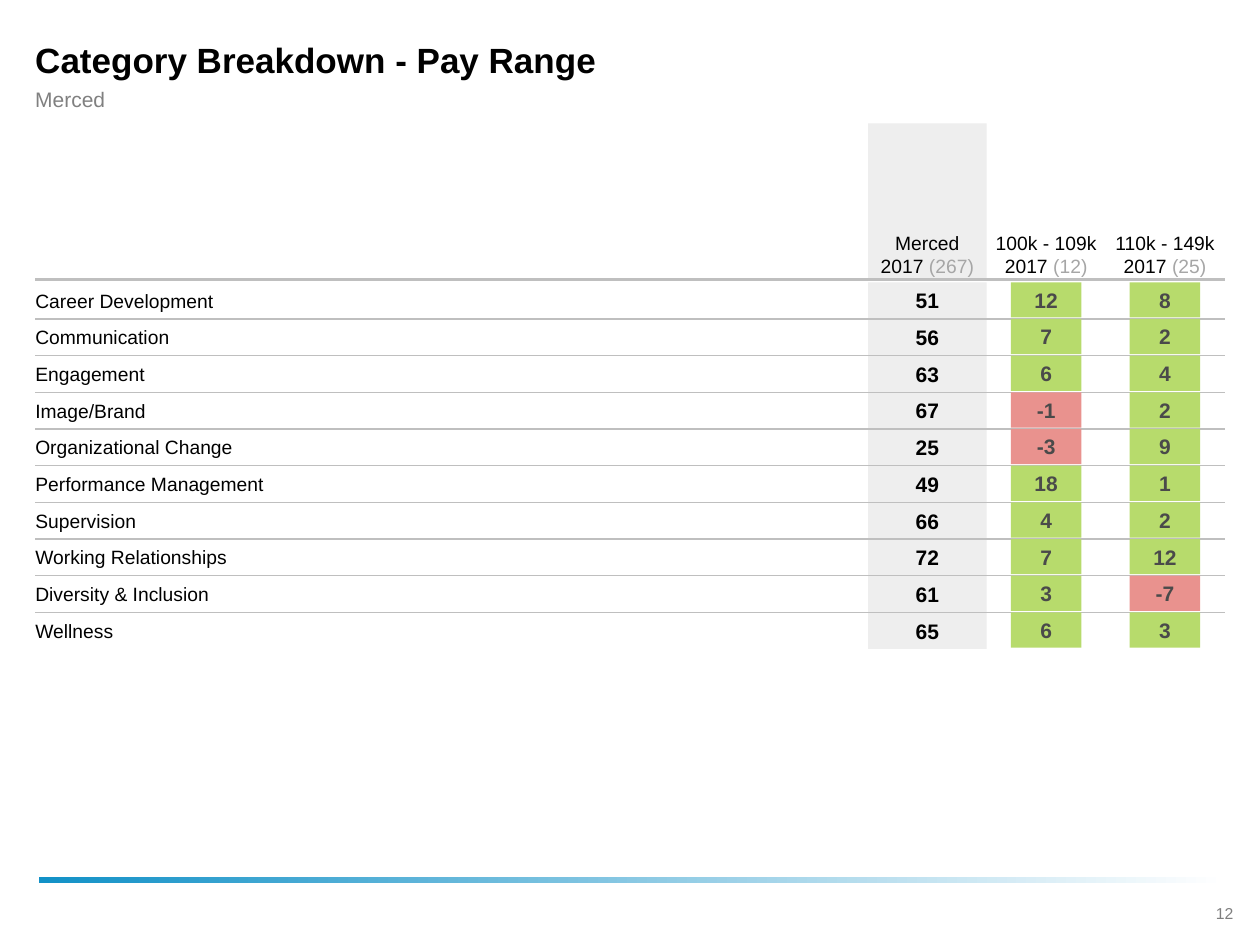
from dataclasses import dataclass

from lxml.etree import SubElement
from pptx import Presentation
from pptx.dml.color import RGBColor
from pptx.enum.shapes import MSO_CONNECTOR, MSO_SHAPE
from pptx.enum.text import MSO_ANCHOR, PP_ALIGN
from pptx.oxml.ns import qn
from pptx.util import Inches, Pt


@dataclass(frozen=True)
class Theme:
    """Colours, type sizes and font of the slide."""
    font: str = "Arial"
    text: str = "000000"
    subtitle: str = "808080"
    page_number: str = "7F7F7F"
    count: str = "A6A6A6"
    score: str = "4A4A4A"
    band: str = "EEEEEE"
    rule: str = "BFBFBF"
    positive: str = "B7DB6C"
    negative: str = "E9928E"
    accent: str = "1291C7"
    paper: str = "FFFFFF"
    title_size: int = 20
    value_size: int = 12
    label_size: int = 11
    page_size: int = 9


THEME = Theme()
LEFT, RIGHT = 0.28, 9.72
COLUMN_LEFT, COLUMN_WIDTH = 6.89, 0.94
COLUMN_PITCH = (RIGHT - COLUMN_LEFT) / 3
HEADER_TOP, HEADER_HEIGHT = 0.98, 1.25
ROW_TOP, ROW_HEIGHT = 2.24, 0.29
ROW_PITCH = 2.62 / 9
CELL_INSETS = (0.03, 0.03, 0.03, 0.03)
TITLE_INSETS = (0, 0, 0.35, 0)

HEADERS = [
    ("Merced 2017 ", "(267)"),
    ("100k - 109k 2017 ", "(12)"),
    ("110k - 149k 2017 ", "(25)"),
]
ROWS = [
    ("Career Development", 51, 12, 8),
    ("Communication", 56, 7, 2),
    ("Engagement", 63, 6, 4),
    ("Image/Brand", 67, -1, 2),
    ("Organizational Change", 25, -3, 9),
    ("Performance Management", 49, 18, 1),
    ("Supervision", 66, 4, 2),
    ("Working Relationships", 72, 7, 12),
    ("Diversity & Inclusion", 61, 3, -7),
    ("Wellness", 65, 6, 3),
]


def format_run(run, size, color, bold=False):
    """Give a run its font, size, colour and weight."""
    run.font.name = THEME.font
    run.font.size = Pt(size)
    run.font.bold = bold
    run.font.color.rgb = RGBColor.from_string(color)


def set_text(shape, text, size, color, bold=False, align=PP_ALIGN.LEFT,
             anchor=MSO_ANCHOR.MIDDLE, insets=(0, 0, 0, 0), wrap=True):
    """Write one formatted paragraph into a shape and return it."""
    frame = shape.text_frame
    frame.word_wrap = wrap
    frame.vertical_anchor = anchor
    (frame.margin_left, frame.margin_top,
     frame.margin_right, frame.margin_bottom) = map(Inches, insets)
    frame.text = text
    paragraph = frame.paragraphs[0]
    paragraph.alignment = align
    format_run(paragraph.runs[0], size, color, bold)
    return paragraph


def add_text(slide, box, text, size, color, **options):
    """Add a text box and return its paragraph."""
    shape = slide.shapes.add_textbox(*map(Inches, box))
    return set_text(shape, text, size, color, **options)


def add_block(slide, box, color):
    """Add a borderless filled rectangle."""
    shape = slide.shapes.add_shape(MSO_SHAPE.RECTANGLE, *map(Inches, box))
    shape.shadow.inherit = False
    shape.fill.solid()
    shape.fill.fore_color.rgb = RGBColor.from_string(color)
    shape.line.fill.background()
    return shape


def add_rule(slide, y, width):
    """Add a horizontal rule across the content area."""
    connector = slide.shapes.add_connector(
        MSO_CONNECTOR.STRAIGHT, Inches(LEFT), Inches(y), Inches(RIGHT), Inches(y))
    connector.line.color.rgb = RGBColor.from_string(THEME.rule)
    connector.line.width = Pt(width)
    SubElement(connector._element.spPr, qn("a:effectLst"))


def add_footer(slide):
    """Add the fading footer bar and the page number."""
    bar = add_block(slide, (0.31, 6.96, 9.42, 0.05), THEME.accent)
    bar.fill.gradient()
    bar.fill.gradient_angle = 0
    for stop, color in zip(bar.fill.gradient_stops, (THEME.accent, THEME.paper)):
        stop.color.rgb = RGBColor.from_string(color)
    add_text(slide, (9.46, 7.12, 0.52, 0.25), "12", THEME.page_size,
             THEME.page_number, align=PP_ALIGN.CENTER, insets=(0.1, 0.05, 0.1, 0.05),
             anchor=MSO_ANCHOR.TOP)


def add_headers(slide):
    """Add the column headings with their respondent counts."""
    add_rule(slide, 2.22, 1.5)
    for index, (label, count) in enumerate(HEADERS):
        box = (COLUMN_LEFT + index * COLUMN_PITCH, HEADER_TOP, COLUMN_WIDTH, HEADER_HEIGHT)
        paragraph = add_text(slide, box, label, THEME.label_size, THEME.text,
                             align=PP_ALIGN.CENTER, anchor=MSO_ANCHOR.BOTTOM,
                             insets=CELL_INSETS)
        run = paragraph.add_run()
        run.text = count
        format_run(run, THEME.label_size, THEME.count)


def add_score(slide, column, top, score):
    """Add a difference score on a green or red block."""
    left = COLUMN_LEFT + column * COLUMN_PITCH + 0.19
    color = THEME.negative if score < 0 else THEME.positive
    block = add_block(slide, (left, top, 0.56, 0.28), color)
    set_text(block, str(score), THEME.value_size, THEME.score, bold=True,
             align=PP_ALIGN.CENTER, insets=(0, 0.05, 0, 0.05), wrap=False)


def add_row(slide, top, category, overall, scores):
    """Add a category with its overall value and difference scores."""
    add_text(slide, (LEFT, top + 0.03, COLUMN_LEFT - LEFT, 0.23), category,
             THEME.label_size, THEME.text)
    add_text(slide, (COLUMN_LEFT, top, COLUMN_WIDTH, ROW_HEIGHT), str(overall),
             THEME.value_size, THEME.text, bold=True, align=PP_ALIGN.CENTER,
             insets=CELL_INSETS)
    for column, score in enumerate(scores, start=1):
        add_score(slide, column, top, score)


def main():
    """Build and save the slide."""
    presentation = Presentation()
    presentation.slide_width, presentation.slide_height = Inches(10), Inches(7.5)
    slide = presentation.slides.add_slide(presentation.slide_layouts[6])
    add_footer(slide)
    add_text(slide, (LEFT, 0.28, RIGHT - LEFT, 0.38), "Category Breakdown - Pay Range",
             THEME.title_size, THEME.text, bold=True, insets=TITLE_INSETS)
    add_text(slide, (LEFT, 0.68, RIGHT - LEFT, 0.21), "Merced",
             THEME.value_size, THEME.subtitle, insets=TITLE_INSETS)
    row_tops = [ROW_TOP + index * ROW_PITCH for index in range(len(ROWS))]
    add_block(slide, (COLUMN_LEFT, HEADER_TOP, COLUMN_WIDTH, HEADER_HEIGHT), THEME.band)
    for top in row_tops:
        add_block(slide, (COLUMN_LEFT, top, COLUMN_WIDTH, ROW_HEIGHT), THEME.band)
    add_headers(slide)
    for top, (category, overall, *scores) in zip(row_tops, ROWS):
        if top > ROW_TOP:
            add_rule(slide, top, 0.75)
        add_row(slide, top, category, overall, scores)
    presentation.save("out.pptx")


if __name__ == "__main__":
    main()
